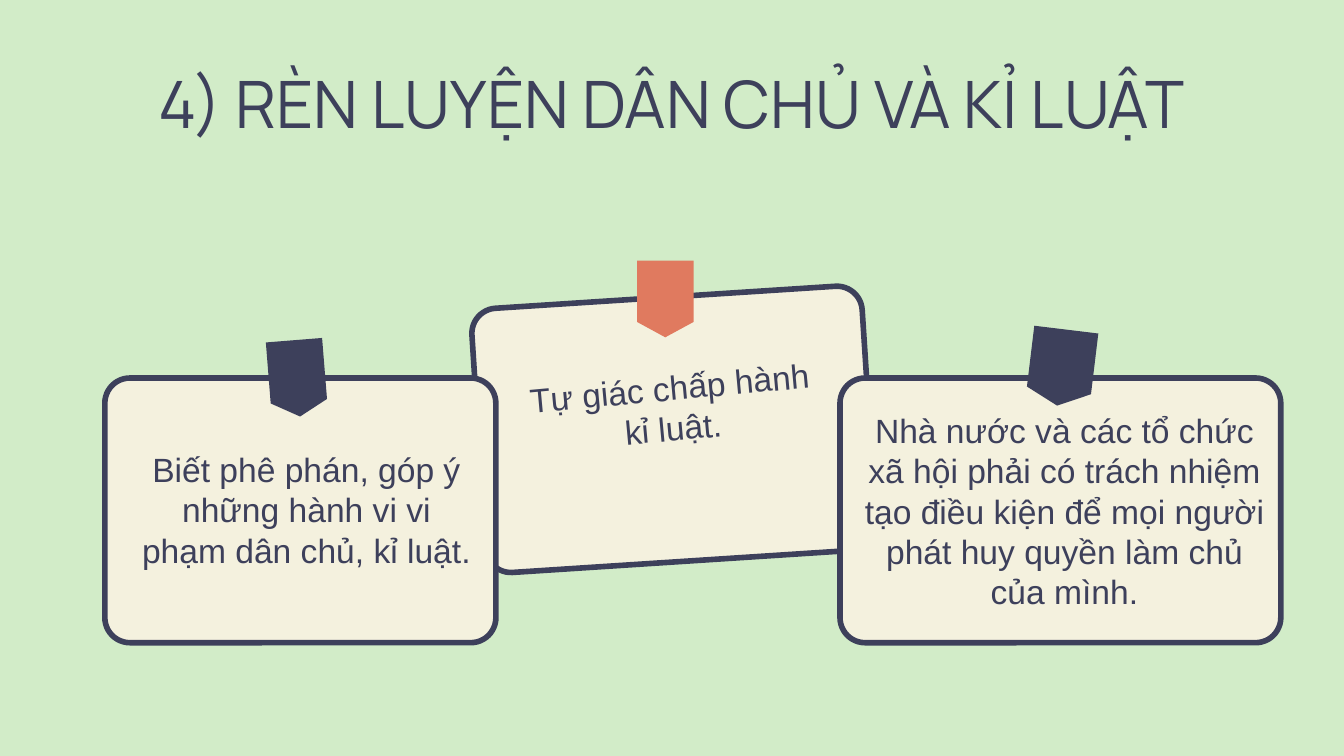
import dataclasses
import typing

import pptx
import pptx.dml.color
import pptx.enum.shapes
import pptx.enum.text
import pptx.util

SLIDE_WIDTH = pptx.util.Inches(10)
SLIDE_HEIGHT = pptx.util.Emu(SLIDE_WIDTH * 9 // 16)

MINT, CREAM, NAVY, CORAL = "D2ECC8", "F4F1DE", "3D405B", "E07A5F"

CARD_HEIGHT = 35.02
TAB_HEIGHT = 10.13
CAPTION_HEIGHT = 16.36


@dataclasses.dataclass(frozen=True)
class Box:
    """Place and size in percent of the slide's width and height."""
    left: float
    top: float
    width: float
    height: float
    rotation: float = 0

    def lengths(self) -> tuple[int, int, int, int]:
        return (int(SLIDE_WIDTH * self.left / 100), int(SLIDE_HEIGHT * self.top / 100),
                int(SLIDE_WIDTH * self.width / 100), int(SLIDE_HEIGHT * self.height / 100))


@dataclasses.dataclass(frozen=True)
class Card:
    panel: Box
    tab: Box
    tab_color: str
    caption: Box
    text: str


# Back to front: the middle card lies under its neighbours
CARDS = [
    Card(Box(35.6, 39.29, 29.1, CARD_HEIGHT, -3.7),
         Box(47.4, 34.49, 4.2, TAB_HEIGHT), CORAL,
         Box(38.6, 48.53, 23, CAPTION_HEIGHT, -5.2),
         "Tự giác chấp hành kỉ luật."),
    Card(Box(62.5, 50, 32.8, CARD_HEIGHT),
         Box(76.6, 43.56, 4.8, TAB_HEIGHT, 6.9), NAVY,
         Box(64.1, 54.22, 30.2, CAPTION_HEIGHT),
         "Nhà nước và các tổ chức xã hội phải có trách nhiệm tạo điều kiện "
         "để mọi người phát huy quyền làm chủ của mình."),
    Card(Box(7.8, 50, 29.1, CARD_HEIGHT),
         Box(20, 44.98, 4.2, TAB_HEIGHT, -4.6), NAVY,
         Box(10.3, 59.38, 25, CAPTION_HEIGHT),
         "Biết phê phán, góp ý những hành vi vi phạm dân chủ, kỉ luật."),
]


def color(value: str) -> pptx.dml.color.RGBColor:
    return pptx.dml.color.RGBColor.from_string(value)


def write_text(shape: typing.Any, text: str, font: str, size: float) -> None:
    frame = shape.text_frame
    frame.word_wrap = True
    frame.auto_size = pptx.enum.text.MSO_AUTO_SIZE.NONE
    frame.vertical_anchor = pptx.enum.text.MSO_ANCHOR.TOP
    frame.margin_left = frame.margin_right = frame.margin_top = frame.margin_bottom = 0
    paragraph = frame.paragraphs[0]
    paragraph.alignment = pptx.enum.text.PP_ALIGN.CENTER
    paragraph.line_spacing = 1.0
    paragraph.space_before = pptx.util.Pt(0)
    run = paragraph.add_run()
    run.text = text
    run.font.name = font
    run.font.size = pptx.util.Pt(size)
    run.font.color.rgb = color(NAVY)


def add_filled(shapes: typing.Any, kind: pptx.enum.shapes.MSO_SHAPE,
               box: Box, fill: str) -> typing.Any:
    shape = shapes.add_shape(kind, *box.lengths())
    shape.rotation = box.rotation
    shape.shadow.inherit = False
    shape.fill.solid()
    shape.fill.fore_color.rgb = color(fill)
    shape.line.fill.background()
    return shape


def add_card(slide: typing.Any, card: Card) -> None:
    group = slide.shapes.add_group_shape()
    panel = add_filled(group.shapes, pptx.enum.shapes.MSO_SHAPE.ROUNDED_RECTANGLE,
                       card.panel, CREAM)
    panel.adjustments[0] = 0.095
    panel.line.color.rgb = color(NAVY)
    panel.line.width = pptx.util.Pt(3)
    add_filled(group.shapes, pptx.enum.shapes.MSO_SHAPE.FLOWCHART_OFFPAGE_CONNECTOR,
               card.tab, card.tab_color)


def add_caption(slide: typing.Any, card: Card) -> None:
    caption = slide.shapes.add_textbox(*card.caption.lengths())
    caption.rotation = card.caption.rotation
    write_text(caption, card.text, "Arial", 18)


def main() -> None:
    presentation = pptx.Presentation()
    presentation.slide_width = SLIDE_WIDTH
    presentation.slide_height = SLIDE_HEIGHT
    slide = presentation.slides.add_slide(presentation.slide_layouts.get_by_name("Title Only"))
    slide.background.fill.solid()
    slide.background.fill.fore_color.rgb = color(MINT)

    # Title
    title = slide.shapes.title
    title.left, title.top, title.width, title.height = Box(7.8, 8.36, 84.4, 17.07).lengths()
    write_text(title, "4) RÈN LUYỆN DÂN CHỦ VÀ KỈ LUẬT", "Manrope", 35)

    # Cards with their tabs, then the captions on top
    for card in CARDS:
        add_card(slide, card)
    for card in CARDS:
        add_caption(slide, card)

    presentation.save("out.pptx")


if __name__ == "__main__":
    main()
